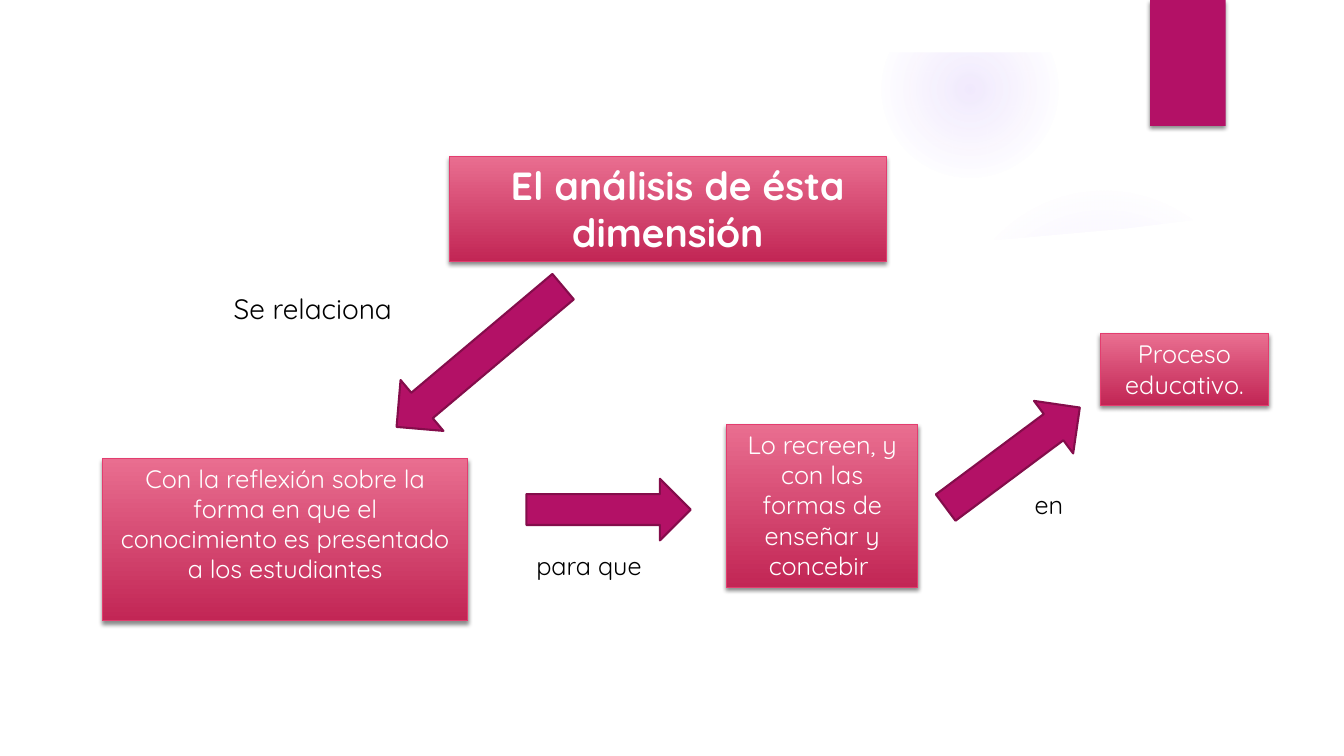
import lxml.etree
import pptx
import pptx.dml.color
import pptx.enum.shapes
import pptx.enum.text
import pptx.oxml
import pptx.oxml.ns
import pptx.util

Pt = pptx.util.Pt
RGBColor = pptx.dml.color.RGBColor
SHAPE = pptx.enum.shapes.MSO_SHAPE
ALIGN = pptx.enum.text.PP_ALIGN
ANCHOR = pptx.enum.text.MSO_ANCHOR
NAMESPACE = pptx.oxml.ns.nsdecls("a")

FONT = "Quicksand"
WHITE = RGBColor(0xFF, 0xFF, 0xFF)
BLACK = RGBColor(0x00, 0x00, 0x00)
MAGENTA = RGBColor(0xB3, 0x11, 0x66)
DARK_MAGENTA = RGBColor(0x84, 0x0D, 0x4B)
PINK = RGBColor(0xE9, 0x6E, 0x90)
CRIMSON = RGBColor(0xC2, 0x26, 0x55)
ROSE = RGBColor(0xE3, 0x3D, 0x6F)
LILAC = RGBColor(0x9B, 0x6B, 0xF2)

WIDTH, HEIGHT = 960, 540

# Upper edge of the white panel, from right to left
PANEL_CURVE = [(924.5, 146.9), (884, 153.4), (844, 158.4), (803.5, 163.4),
               (763.2, 167), (723, 170.6), (683.3, 173.5), (624, 176.4),
               (547, 178.2), (455, 178.5), (368, 176.4), (288.7, 171.4),
               (204, 165.6), (134.6, 159.1), (81.4, 152.6), (36, 146.9)]


def add_plain_shape(slide, kind, frame, color):
    left, top, width, height = frame
    shape = slide.shapes.add_shape(kind, Pt(left), Pt(top), Pt(width), Pt(height))
    shape.shadow.inherit = False
    shape.fill.solid()
    shape.fill.fore_color.rgb = color
    shape.line.fill.background()
    return shape


def add_glow(slide, left, top, size, stops):
    """Circle fading outwards; stops are (position, opacity) in percent."""
    glow = add_plain_shape(slide, SHAPE.OVAL, (left, top, size, size), LILAC)
    marks = "".join(
        f'<a:gs pos="{position * 1000}"><a:srgbClr val="{LILAC}">'
        f'<a:alpha val="{opacity * 1000}"/></a:srgbClr></a:gs>'
        for position, opacity in stops)
    gradient = pptx.oxml.parse_xml(
        f'<a:gradFill {NAMESPACE}><a:gsLst>{marks}</a:gsLst><a:path path="circle">'
        '<a:fillToRect l="50000" t="50000" r="50000" b="50000"/></a:path></a:gradFill>')
    properties = glow.element.spPr
    properties.replace(properties.find(pptx.oxml.ns.qn("a:solidFill")), gradient)


def add_panel(slide):
    builder = slide.shapes.build_freeform(Pt(36), Pt(504), scale=1)
    points = [(924.5, 504)] + PANEL_CURVE
    builder.add_line_segments([(Pt(x), Pt(y)) for x, y in points], close=True)
    panel = builder.convert_to_shape()
    panel.shadow.inherit = False
    panel.fill.solid()
    panel.fill.fore_color.rgb = WHITE
    panel.line.fill.background()


def add_shadow(shape):
    effects = shape.element.spPr.find(pptx.oxml.ns.qn("a:effectLst"))
    effects.append(pptx.oxml.parse_xml(
        f'<a:outerShdw {NAMESPACE} blurRad="{Pt(3)}" dist="{Pt(2)}" dir="5400000" '
        'rotWithShape="0"><a:srgbClr val="000000"><a:alpha val="45000"/>'
        '</a:srgbClr></a:outerShdw>'))


def write_text(shape, text, size, color, align, bold=False):
    frame = shape.text_frame
    frame.word_wrap = True
    frame.vertical_anchor = ANCHOR.TOP
    frame.text = text
    para = frame.paragraphs[0]
    para.alignment = align
    font = para.runs[0].font
    font.name = FONT
    font.size = Pt(size)
    font.bold = bold
    font.color.rgb = color
    return para


def add_concept(slide, frame, text, size=18, bold=False):
    box = add_plain_shape(slide, SHAPE.RECTANGLE, frame, PINK)
    box.fill.gradient()
    box.fill.gradient_angle = 270
    for stop, color in zip(box.fill.gradient_stops, (PINK, CRIMSON)):
        stop.color.rgb = color
    box.line.color.rgb = ROSE
    box.line.width = Pt(0.75)
    add_shadow(box)
    return write_text(box, text, size, WHITE, ALIGN.CENTER, bold)


def add_label(slide, frame, text, size=18):
    left, top, width, height = frame
    box = slide.shapes.add_textbox(Pt(left), Pt(top), Pt(width), Pt(height))
    write_text(box, text, size, BLACK, ALIGN.LEFT)


def add_arrow(slide, kind, frame, rotation=0):
    arrow = add_plain_shape(slide, kind, frame, MAGENTA)
    arrow.line.color.rgb = DARK_MAGENTA
    arrow.line.width = Pt(1.5)
    arrow.rotation = rotation


def main():
    deck = pptx.Presentation()
    deck.slide_width, deck.slide_height = Pt(WIDTH), Pt(HEIGHT)
    slide = deck.slides.add_slide(deck.slide_layouts[6])

    # Background: soft glows partly covered by white, and the corner tab
    add_glow(slide, 677.5, 131.8, 221.8, [(0, 7), (36, 6), (69, 0)])
    add_glow(slide, 630, 0.7, 126, [(0, 14), (36, 7), (73, 0)])
    add_panel(slide)
    add_plain_shape(slide, SHAPE.RECTANGLE, (0, 0, WIDTH, 37.4), WHITE)
    tab = add_plain_shape(slide, SHAPE.RECTANGLE, (821.5, 0, 54, 90), MAGENTA)
    add_shadow(tab)

    # Concepts
    title = add_concept(slide, (321, 111.6, 312, 75),
                        "El análisis de ésta dimensión", 28, True)
    title._p.get_or_add_pPr().set("indent", str(Pt(14)))
    add_concept(slide, (73.2, 327.2, 261, 116.4),
                "Con la reflexión sobre la forma en que el conocimiento "
                "es presentado a los estudiantes")
    add_concept(slide, (519, 303, 136.5, 116.4),
                "Lo recreen, y con las formas de enseñar y concebir ")
    add_concept(slide, (786, 238.4, 120, 51), "Proceso educativo.")

    # Linking words
    add_label(slide, (159.8, 204.5, 136.8, 31.5), "Se relaciona", 20)
    add_label(slide, (376, 389.5, 102, 29), "para que")
    add_label(slide, (732, 345.6, 50.4, 29), "en")

    # Arrows
    add_arrow(slide, SHAPE.LEFT_ARROW, (265, 231.1, 155.5, 47.5), 319.9)
    add_arrow(slide, SHAPE.RIGHT_ARROW, (376, 342, 117.4, 44), 0)
    add_arrow(slide, SHAPE.UP_ARROW, (700, 267.1, 46.8, 119.5), 53.3)

    deck.save("out.pptx")


if __name__ == "__main__":
    main()
